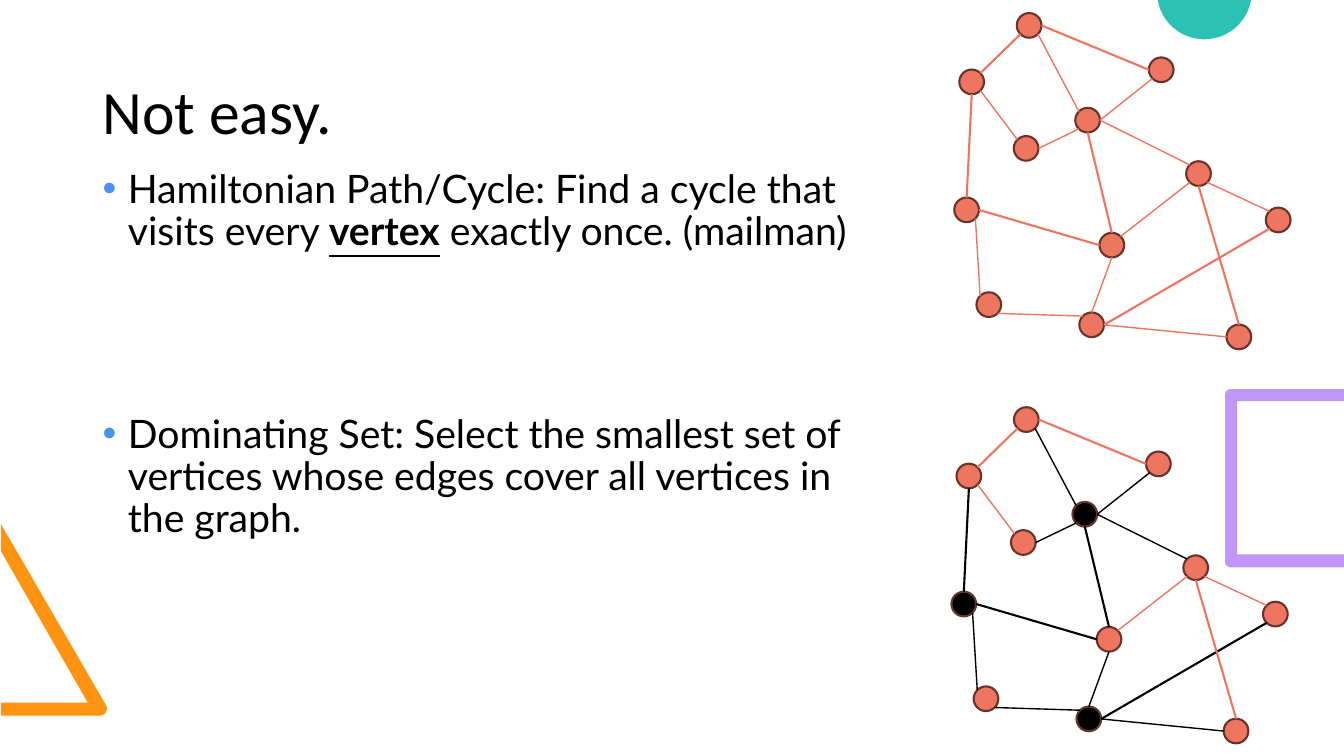
"""Build the slide that shows two hard graph problems beside their graphs."""

from dataclasses import dataclass
from math import cos, radians, sin

from lxml import etree
from pptx import Presentation
from pptx.dml.color import RGBColor
from pptx.enum.shapes import MSO_CONNECTOR, MSO_SHAPE
from pptx.enum.text import MSO_ANCHOR
from pptx.oxml.ns import qn
from pptx.slide import Slide
from pptx.text.text import TextFrame
from pptx.util import Emu, Inches, Pt

OVAL = MSO_SHAPE.OVAL
STRAIGHT = MSO_CONNECTOR.STRAIGHT
MIDDLE = MSO_ANCHOR.MIDDLE
TOP = MSO_ANCHOR.TOP
BLANK = 6
COLUMNS, ROWS = 133.3, 75
CELL = Inches(0.1)
DIAMETER = 2.45

Point = tuple[float, float]


@dataclass(frozen=True)
class Theme:
    text: str = "000000"
    bullet: str = "4D90EF"
    coral: str = "EE7660"
    rim: str = "68342A"
    chosen: str = "000000"
    orange: str = "FF9413"
    teal: str = "2BC2B4"
    purple: str = "C097F8"
    title_font: str = "Calibri"
    body_font: str = "Lato"
    title_size: float = 44
    body_size: float = 28
    thick: float = 1.5
    thin: float = 1


@dataclass(frozen=True)
class Edge:
    start: str
    start_side: str
    end: str
    end_side: str
    width: float


@dataclass(frozen=True)
class Graph:
    column: float
    row: float
    chosen: str


@dataclass(frozen=True)
class Decoration:
    color: str
    outline: list[Point]


@dataclass(frozen=True)
class Phrase:
    text: str
    stressed: bool = False


@dataclass(frozen=True)
class Problem:
    phrases: tuple[Phrase, ...]
    space_before: float


THEME = Theme()
ANGLES = {side: 45 * step for step, side in enumerate(("E", "SE", "S", "SW", "W", "NW", "N", "NE"))}

VERTICES: dict[str, Point] = {
    "A": (0.5, 5.6), "B": (5.9, 12.2), "C": (12, 9.4), "D": (0, 18.3),
    "E": (12.4, 29.7), "F": (23, 14.7), "G": (6.2, 0), "H": (14.4, 21.8),
    "I": (2.2, 27.7), "J": (27, 30.9), "K": (19.3, 4.4), "L": (30.9, 19.3),
}
EDGES = (
    Edge("A", "S", "D", "N", THEME.thick),
    Edge("A", "NE", "G", "SW", THEME.thick),
    Edge("G", "E", "K", "W", THEME.thick),
    Edge("C", "E", "K", "SW", THEME.thin),
    Edge("C", "E", "F", "NW", THEME.thin),
    Edge("F", "SE", "L", "NW", THEME.thin),
    Edge("H", "NE", "F", "SW", THEME.thin),
    Edge("C", "SW", "B", "E", THEME.thin),
    Edge("A", "SE", "B", "NW", THEME.thin),
    Edge("C", "S", "H", "N", THEME.thick),
    Edge("H", "S", "E", "N", THEME.thin),
    Edge("E", "E", "L", "SW", THEME.thick),
    Edge("F", "S", "J", "N", THEME.thick),
    Edge("E", "E", "J", "W", THEME.thin),
    Edge("I", "SE", "E", "NW", THEME.thin),
    Edge("D", "SE", "I", "NW", THEME.thin),
    Edge("H", "W", "D", "E", THEME.thick),
    Edge("C", "NW", "G", "SE", THEME.thin),
)
GRAPHS = (Graph(94.37, 40.4, "CDE"), Graph(94.65, 1.3, ""))

PROBLEMS = (
    Problem((Phrase("Hamiltonian Path/Cycle: Find a cycle that visits every "),
             Phrase("vertex", stressed=True),
             Phrase(" exactly once. (mailman)")), 10),
    Problem((Phrase("Dominating Set: Select the smallest set of vertices whose edges "
                    "cover all vertices in the graph."),), 106.5),
)


def grid(cells: float) -> Emu:
    """Turn a number of grid cells into a length."""
    return Emu(round(cells * CELL))


def arc(center: Point, radius: float, first: float, last: float, steps: int = 24) -> list[Point]:
    """List points along an arc, with angles in degrees clockwise from east."""
    turns = [radians(first + (last - first) * step / steps) for step in range(steps + 1)]
    return [(center[0] + radius * cos(turn), center[1] + radius * sin(turn)) for turn in turns]


DECORATIONS = (
    Decoration(THEME.orange, [(0.1, 71), (0.1, 69.7), (8.7, 69.7), (0.1, 54.7), (0.1, 52),
                              *arc((9.9, 70.3), 0.7, -28, 90)]),
    Decoration(THEME.teal, arc((119.45, -0.8), 4.7, 10, 170)),
    Decoration(THEME.purple, [(COLUMNS, 56.3), (COLUMNS, 55), (122.7, 55), (122.7, 39.8),
                              (COLUMNS, 39.8), (COLUMNS, 38.6),
                              *arc((122.1, 39.2), 0.6, 270, 180),
                              *arc((122.1, 55.7), 0.6, 180, 90)]),
)


def draw_decoration(slide: Slide, decoration: Decoration) -> None:
    """Draw one filled outline at the edge of the slide."""
    start, *rest = [(grid(x), grid(y)) for x, y in decoration.outline]
    builder = slide.shapes.build_freeform(*start)
    builder.add_line_segments(rest, close=True)
    ornament = builder.convert_to_shape()
    ornament.shadow.inherit = False
    ornament.fill.solid()
    ornament.fill.fore_color.rgb = RGBColor.from_string(decoration.color)
    ornament.line.fill.background()


def rim_point(graph: Graph, vertex: str, side: str) -> tuple[Emu, Emu]:
    """Find the point on a vertex rim that faces a compass side."""
    x, y = VERTICES[vertex]
    turn, radius = radians(ANGLES[side]), DIAMETER / 2
    return (grid(graph.column + x + radius * (1 + cos(turn))),
            grid(graph.row + y + radius * (1 + sin(turn))))


def draw_graph(slide: Slide, graph: Graph) -> None:
    """Draw vertices and edges, darkening chosen vertices and the edges they touch."""
    for name, (x, y) in VERTICES.items():
        vertex = slide.shapes.add_shape(OVAL, grid(graph.column + x), grid(graph.row + y),
                                        grid(DIAMETER), grid(DIAMETER))
        vertex.shadow.inherit = False
        vertex.fill.solid()
        vertex.fill.fore_color.rgb = RGBColor.from_string(
            THEME.chosen if name in graph.chosen else THEME.coral)
        vertex.line.color.rgb = RGBColor.from_string(THEME.rim)
        vertex.line.width = Pt(THEME.thick)
    for edge in EDGES:
        link = slide.shapes.add_connector(STRAIGHT, *rim_point(graph, edge.start, edge.start_side),
                                          *rim_point(graph, edge.end, edge.end_side))
        covered = edge.start in graph.chosen or edge.end in graph.chosen
        link.line.color.rgb = RGBColor.from_string(THEME.chosen if covered else THEME.coral)
        link.line.width = Pt(edge.width)
        etree.SubElement(link._element.spPr, qn("a:effectLst"))


def add_text_area(slide: Slide, column: float, row: float, width: float, height: float,
                  anchor: MSO_ANCHOR) -> TextFrame:
    """Add a wrapping text area on the grid."""
    frame = slide.shapes.add_textbox(grid(column), grid(row), grid(width), grid(height)).text_frame
    frame.word_wrap = True
    frame.vertical_anchor = anchor
    return frame


def add_phrase(paragraph, phrase: Phrase, font: str, size: float) -> None:
    """Append one run in the given font."""
    run = paragraph.add_run()
    run.text = phrase.text
    run.font.name, run.font.size = font, Pt(size)
    run.font.bold = run.font.underline = phrase.stressed
    run.font.color.rgb = RGBColor.from_string(THEME.text)


def add_problem(paragraph, problem: Problem) -> None:
    """Fill one bulleted paragraph."""
    paragraph.line_spacing = 0.9
    paragraph.space_before, paragraph.space_after = Pt(problem.space_before), Pt(8)
    properties = paragraph._p.get_or_add_pPr()
    properties.set("marL", str(grid(2.5)))
    properties.set("indent", str(grid(-2.5)))
    bullet_color = etree.SubElement(properties, qn("a:buClr"))
    etree.SubElement(bullet_color, qn("a:srgbClr"), val=THEME.bullet)
    etree.SubElement(properties, qn("a:buFont"), typeface="Arial")
    etree.SubElement(properties, qn("a:buChar"), char="•")
    for phrase in problem.phrases:
        add_phrase(paragraph, phrase, THEME.body_font, THEME.body_size)


def main() -> None:
    """Compose the slide and save it."""
    deck = Presentation()
    deck.slide_width, deck.slide_height = grid(COLUMNS), grid(ROWS)
    slide = deck.slides.add_slide(deck.slide_layouts[BLANK])
    for decoration in DECORATIONS:
        draw_decoration(slide, decoration)
    heading = add_text_area(slide, 9.2, 3.3, 115, 16.1, MIDDLE).paragraphs[0]
    heading.line_spacing = 0.9
    add_phrase(heading, Phrase("Not easy."), THEME.title_font, THEME.title_size)
    body = add_text_area(slide, 9.2, 16.3, 80.2, 58.7, TOP)
    for position, problem in enumerate(PROBLEMS):
        add_problem(body.add_paragraph() if position else body.paragraphs[0], problem)
    for graph in GRAPHS:
        draw_graph(slide, graph)
    deck.save("out.pptx")


if __name__ == "__main__":
    main()
